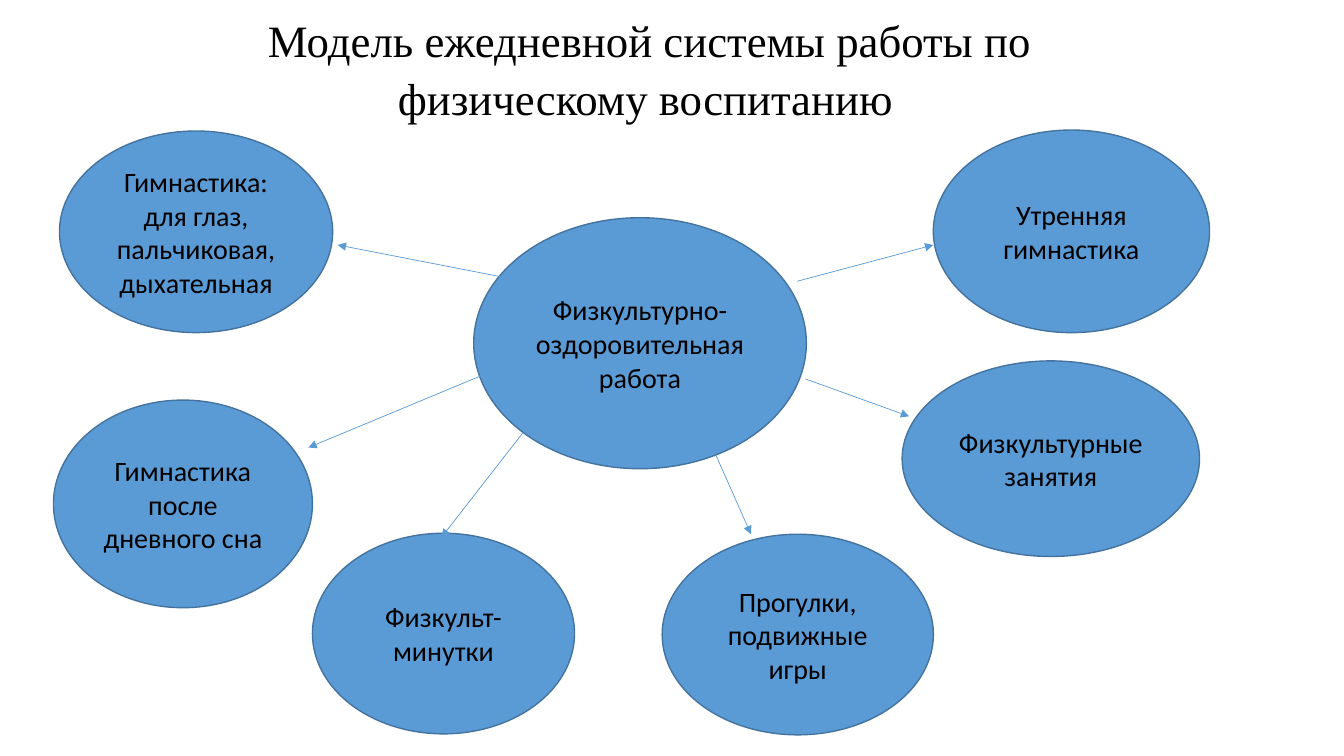
from lxml import etree
from pptx import Presentation
from pptx.dml.color import RGBColor
from pptx.enum import shapes, text
from pptx.oxml import ns
from pptx.util import Pt

BLACK = RGBColor(0x00, 0x00, 0x00)
BLUE = RGBColor(0x5B, 0x9B, 0xD5)
DARK_BLUE = RGBColor(0x43, 0x73, 0x9E)

# Ovals: text, left, top, width, height (points)
OVALS = [
    ("Физкультурно-оздоровительная работа", 338.4, 155.5, 237.6, 179.3),
    ("Утренняя гимнастика", 666.7, 92.9, 197.3, 144.7),
    ("Физкультурные занятия", 644.4, 257.8, 212.4, 139.7),
    ("Прогулки, подвижные игры", 473, 381.6, 193.7, 143.3),
    ("Физкульт-минутки", 223.2, 380.9, 187.2, 143.3),
    ("Гимнастика после дневного сна", 38.2, 285.8, 185, 148.3),
    ("Гимнастика: для глаз, пальчиковая, дыхательная", 42.5, 93.6, 195.1, 144),
]

# Arrows from the central oval: start x, start y, end x, end y (points)
ARROWS = [
    (569.5, 200.9, 666.7, 175),
    (575.3, 270.7, 649.4, 297.4),
    (511.2, 324.7, 536.4, 381.6),
    (373.7, 308.9, 315.4, 383.8),
    (357.1, 262.8, 220.3, 319.7),
    (374.4, 200.9, 241.2, 175),
]


class Diagram:
    """Style and current slide of the diagram."""

    title_font = "Times New Roman"
    body_font = "Calibri"

    def __init__(self, presentation):
        self.slide = presentation.slides.add_slide(presentation.slide_layouts[5])

    def title(self, wording, left, top, width, height):
        shape = self.slide.shapes.title
        shape.left, shape.top = Pt(left), Pt(top)
        shape.width, shape.height = Pt(width), Pt(height)
        frame = shape.text_frame
        frame.word_wrap = True
        frame.auto_size = text.MSO_AUTO_SIZE.NONE
        frame.vertical_anchor = text.MSO_ANCHOR.TOP
        paragraph = frame.paragraphs[0]
        paragraph.alignment = text.PP_ALIGN.CENTER
        paragraph.line_spacing = 1.07
        for content, size in ((wording, 32), ("\N{NO-BREAK SPACE}", 24)):
            run = paragraph.add_run()
            run.text = content
            run.font.name = self.title_font
            run.font.size = Pt(size)
            run.font.color.rgb = BLACK

    def oval(self, wording, left, top, width, height):
        shape = self.slide.shapes.add_shape(
            shapes.MSO_SHAPE.OVAL, Pt(left), Pt(top), Pt(width), Pt(height))
        shape.shadow.inherit = False
        shape.fill.solid()
        shape.fill.fore_color.rgb = BLUE
        shape.line.color.rgb = DARK_BLUE
        shape.line.width = Pt(1)
        frame = shape.text_frame
        frame.word_wrap = True
        frame.vertical_anchor = text.MSO_ANCHOR.MIDDLE
        paragraph = frame.paragraphs[0]
        paragraph.text = wording
        paragraph.alignment = text.PP_ALIGN.CENTER
        paragraph.font.name = self.body_font
        paragraph.font.size = Pt(20)
        paragraph.font.color.rgb = BLACK

    def arrow(self, start_x, start_y, end_x, end_y):
        connector = self.slide.shapes.add_connector(
            shapes.MSO_CONNECTOR.STRAIGHT,
            Pt(start_x), Pt(start_y), Pt(end_x), Pt(end_y))
        connector.line.color.rgb = BLUE
        connector.line.width = Pt(0.5)
        line = connector.line._get_or_add_ln()
        etree.SubElement(line, ns.qn("a:tailEnd"), type="triangle")
        etree.SubElement(connector._element.spPr, ns.qn("a:effectLst"))


def main():
    presentation = Presentation()
    presentation.slide_width, presentation.slide_height = Pt(960), Pt(540)
    diagram = Diagram(presentation)

    # Title
    diagram.title("Модель ежедневной системы работы по физическому воспитанию",
                  140.4, 2.9, 647.3, 85)

    # Centre and the parts of the daily system
    for oval in OVALS:
        diagram.oval(*oval)

    # Links from the centre
    for arrow in ARROWS:
        diagram.arrow(*arrow)

    presentation.save("out.pptx")


if __name__ == "__main__":
    main()
